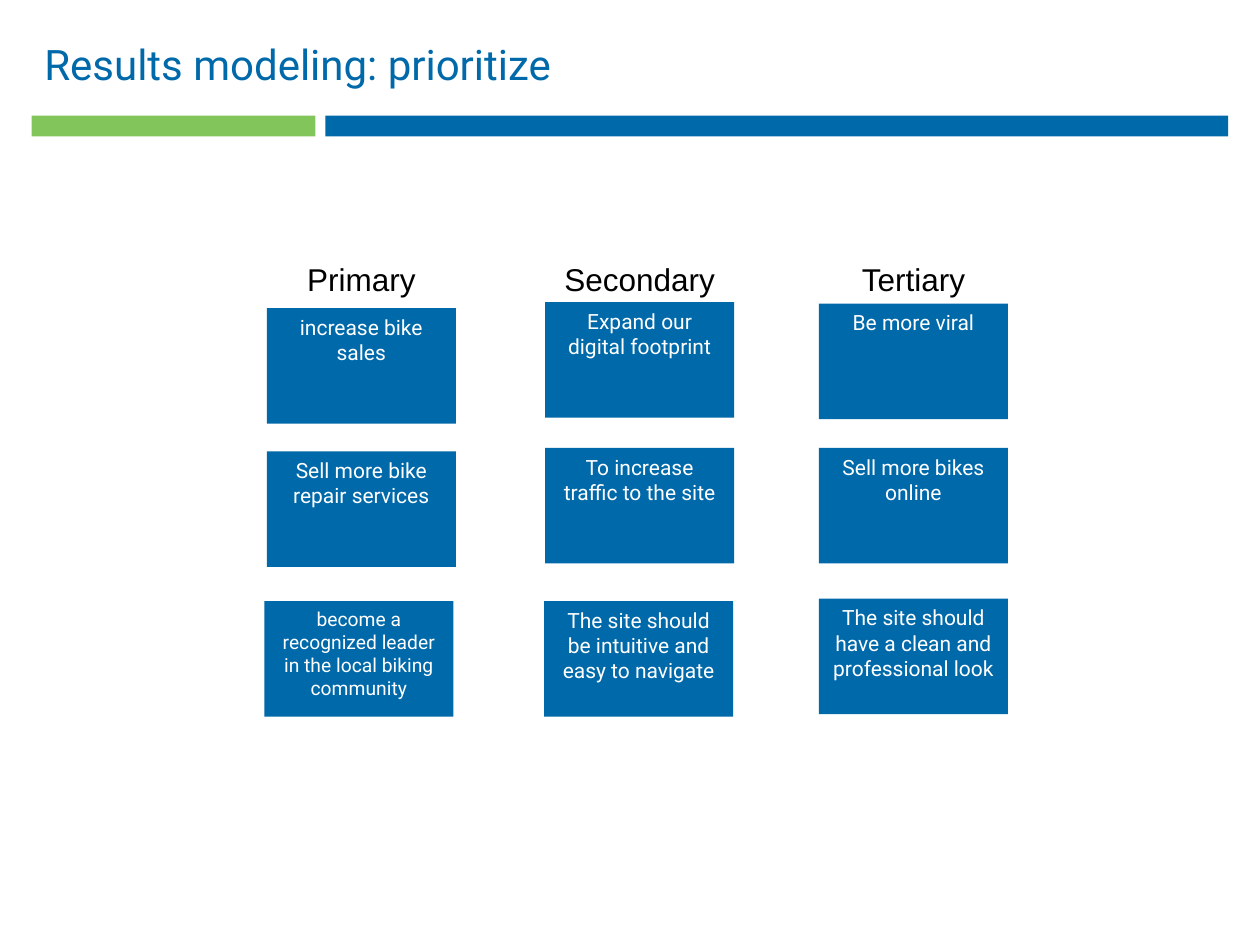
from dataclasses import dataclass

from pptx import Presentation
from pptx.dml.color import RGBColor as Rgb
from pptx.enum.shapes import MSO_SHAPE as Kind
from pptx.enum.text import MSO_ANCHOR as Anchor, PP_ALIGN as Align
from pptx.shapes.autoshape import Shape
from pptx.slide import Slide
from pptx.util import Cm, Pt


@dataclass(frozen=True)
class Theme:
    blue: Rgb = Rgb(0x00, 0x69, 0xAA)
    green: Rgb = Rgb(0x82, 0xC5, 0x5B)
    white: Rgb = Rgb(0xFF, 0xFF, 0xFF)
    black: Rgb = Rgb(0x00, 0x00, 0x00)
    font: str = "Roboto"
    head_font: str = "Arial"
    title: int = 24
    head: int = 18
    body: int = 12
    small: int = 11


THEME = Theme()


@dataclass(frozen=True)
class Goal:
    text: str
    top: float
    shift: float = 0
    size: int = THEME.body


@dataclass(frozen=True)
class Column:
    head: str
    width: float
    left: float
    goals: tuple[Goal, ...]


BOX_W, BOX_H = 3.81, 2.33
HEAD_TOP, HEAD_H = 5.11, 1.02
BAR_TOP, BAR_H = 2.33, 0.42
BARS = ((6.56, 18.2, THEME.blue), (0.64, 5.72, THEME.green))

COLUMNS = (
    Column("Primary", 2.72, 5.38, (
        Goal("increase bike sales", 6.21),
        Goal("Sell more bike repair services", 9.1),
        Goal("become a recognized leader in the local biking community",
             12.12, -0.05, THEME.small),
    )),
    Column("Secondary", 3.58, 10.99, (
        Goal("Expand our digital footprint", 6.09),
        Goal("To increase traffic to the site", 9.03),
        Goal("The site should be intuitive and easy to navigate", 12.12, -0.02),
    )),
    Column("Tertiary", 2.62, 16.51, (
        Goal("Be more viral", 6.12),
        Goal("Sell more bikes online", 9.03),
        Goal("The site should have a clean and professional look", 12.07),
    )),
)


def write(shape: Shape, text: str, size: int, color: Rgb,
          font: str = THEME.font, align: Align = Align.CENTER,
          wrap: bool = True) -> None:
    frame = shape.text_frame
    frame.word_wrap = wrap
    frame.vertical_anchor = Anchor.TOP
    para = frame.paragraphs[0]
    para.alignment = align
    run = para.add_run()
    run.text = text
    run.font.size = Pt(size)
    run.font.name = font
    run.font.color.rgb = color


def add_block(slide: Slide, left: float, top: float, width: float,
              height: float, color: Rgb) -> Shape:
    block = slide.shapes.add_shape(
        Kind.RECTANGLE, Cm(left), Cm(top), Cm(width), Cm(height))
    block.shadow.inherit = False
    block.fill.solid()
    block.fill.fore_color.rgb = color
    block.line.fill.background()
    return block


def add_title(slide: Slide, text: str) -> None:
    title = slide.shapes.title
    title.left, title.top = Cm(0.64), Cm(0.64)
    title.width, title.height = Cm(22.86), Cm(1.27)
    write(title, text, THEME.title, THEME.blue, align=Align.LEFT)


def add_column(slide: Slide, col: Column) -> None:
    """Draw a heading centred above its stack of goals."""
    left = col.left + (BOX_W - col.width) / 2
    head = slide.shapes.add_textbox(
        Cm(left), Cm(HEAD_TOP), Cm(col.width), Cm(HEAD_H))
    write(head, col.head, THEME.head, THEME.black, THEME.head_font, wrap=False)
    for goal in col.goals:
        box = add_block(slide, col.left + goal.shift, goal.top,
                        BOX_W, BOX_H, THEME.blue)
        write(box, goal.text, goal.size, THEME.white)


def main() -> None:
    deck = Presentation()
    deck.slide_width, deck.slide_height = Cm(25.4), Cm(19.05)
    slide = deck.slides.add_slide(deck.slide_layouts[5])
    for left, width, color in BARS:
        add_block(slide, left, BAR_TOP, width, BAR_H, color)
    add_title(slide, "Results modeling: prioritize")
    for col in COLUMNS:
        add_column(slide, col)
    deck.save("out.pptx")


if __name__ == "__main__":
    main()
